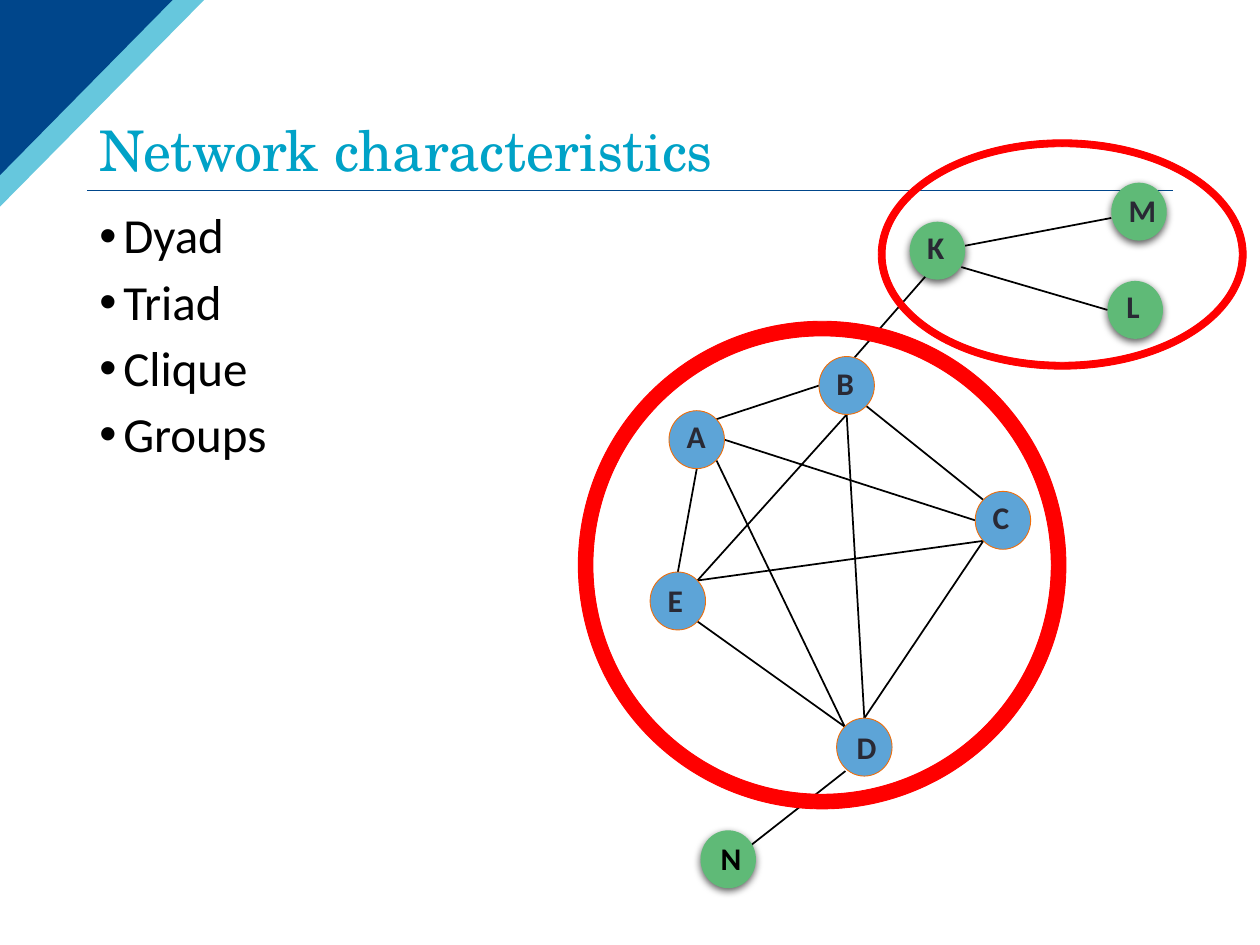
from math import cos, pi, sin

from lxml.etree import SubElement
from pptx import Presentation
from pptx.dml.color import RGBColor
from pptx.enum.shapes import MSO_CONNECTOR as Connector, MSO_SHAPE as Shape
from pptx.enum.text import MSO_ANCHOR as Anchor
from pptx.oxml import parse_xml
from pptx.oxml.ns import nsdecls, qn
from pptx.util import Inches, Pt

NAVY, CYAN, BLACK, INK = "00468B", "00A2C7", "000000", "292934"
BLUE, ORANGE, GREEN, RED = "5DA4D7", "EF6E0B", "5FBA77", "FF0000"
NODE_WIDTH, NODE_HEIGHT = 0.44, 0.46


def color(value):
    return RGBColor.from_string(value)


def site(node, index):
    """Point on a node's rim; sites run counterclockwise from the top in eighths."""
    left, top = nodes[node][:2]
    angle = index * pi / 4
    return (left + NODE_WIDTH / 2 * (1 - sin(angle)),
            top + NODE_HEIGHT / 2 * (1 - cos(angle)))


deck = Presentation()
deck.slide_width, deck.slide_height = Inches(10), Inches(7.5)
page = deck.slides.add_slide(deck.slide_layouts[6])
shapes = page.shapes

# Corner triangles
for width, height, fill, opacity in [(1.62, 1.64, CYAN, 60), (1.37, 1.39, NAVY, 100)]:
    outline = shapes.build_freeform(0, 0, scale=1.0)
    outline.add_line_segments([(Inches(width), 0), (0, Inches(height))], close=True)
    corner = outline.convert_to_shape()
    corner.shadow.inherit = False
    corner.fill.solid()
    corner.fill.fore_color.rgb = color(fill)
    corner.line.fill.background()
    if opacity < 100:
        srgb = corner._element.spPr.find(".//" + qn("a:srgbClr"))
        SubElement(srgb, qn("a:alpha"), val=str(opacity * 1000))

# Nodes: left, top, fill, letter color, letter box offset
nodes = {
    "K": (7.22, 1.76, GREEN, INK, (0.04, 0)),
    "L": (8.79, 2.23, GREEN, INK, (0.05, 0)),
    "M": (8.82, 1.45, GREEN, INK, (0.04, 0.02)),
    "N": (5.56, 6.59, GREEN, BLACK, (0.06, 0.02)),
    "A": (5.31, 3.26, BLUE, INK, (0.04, 0)),
    "B": (6.5, 2.83, BLUE, INK, (0.04, 0.01)),
    "C": (7.74, 3.9, BLUE, INK, (0.04, 0)),
    "D": (6.64, 5.7, BLUE, INK, (0.06, 0.03)),
    "E": (5.16, 4.54, BLUE, INK, (0.04, 0.02)),
}
TOP, TOP_LEFT, LEFT, BOTTOM_LEFT, BOTTOM, BOTTOM_RIGHT, RIGHT, TOP_RIGHT = range(8)
clique_links = [
    ("D", TOP, "B", BOTTOM),
    ("C", BOTTOM_LEFT, "D", TOP),
    ("A", BOTTOM, "E", TOP),
    ("A", TOP_RIGHT, "B", LEFT),
    ("E", BOTTOM_RIGHT, "D", TOP_LEFT),
    ("B", BOTTOM, "E", TOP_RIGHT),
    ("C", TOP_LEFT, "B", BOTTOM_RIGHT),
    ("E", TOP_RIGHT, "C", BOTTOM_LEFT),
    ("D", TOP_LEFT, "A", BOTTOM_RIGHT),
    ("C", LEFT, "A", RIGHT),
]
title_rule = ((0.69, 1.51), (9.31, 1.51), NAVY, 0.75)
outer_links = [
    ((6.78, 2.84), (7.41, 2.12)),
    ((6.71, 6.12), (5.92, 6.74)),
    ((7.63, 2.12), (8.79, 2.46)),
    ((7.66, 1.95), (8.82, 1.73)),
]
links = outer_links + [(site(a, i), site(b, j)) for a, i, b, j in clique_links]
for start, end, stroke, weight in [title_rule] + [(*link, BLACK, 1) for link in links]:
    line = shapes.add_connector(Connector.STRAIGHT, *map(Inches, start + end))
    line.line.color.rgb = color(stroke)
    line.line.width = Pt(weight)
    SubElement(line._element.spPr, qn("a:effectLst"))

for left, top, fill, _, _ in nodes.values():
    node = shapes.add_shape(Shape.OVAL, *map(Inches, (left, top, NODE_WIDTH, NODE_HEIGHT)))
    node.shadow.inherit = False
    node.fill.solid()
    node.fill.fore_color.rgb = color(fill)
    if fill == BLUE:
        node.line.color.rgb = color(ORANGE)
        node.line.width = Pt(0.5)
    else:
        node.line.fill.background()
        node._element.spPr.find(qn("a:effectLst")).append(parse_xml(
            f'<a:outerShdw {nsdecls("a")} blurRad="{Pt(4.5)}" dist="{Pt(1.5)}" '
            'dir="5400000" rotWithShape="0"><a:srgbClr val="000000">'
            '<a:alpha val="63000"/></a:srgbClr></a:outerShdw>'))

# Text: place, lines, font, anchor, paragraph format, bulleted
title_font = {"name": "TeX Gyre Schola", "size": Pt(32)}
body_font = {"name": "Calibri", "size": Pt(28)}
letter_font = {"name": "Calibri", "size": Pt(18), "bold": True}
texts = [
    ((0.69, 0.4, 8.62, 1.11), ["Network characteristics"], title_font, CYAN,
     Anchor.BOTTOM, {"line_spacing": 0.9}, False),
    ((0.69, 1.63, 8.62, 5.12), ["Dyad", "Triad", "Clique", "Groups"], body_font, BLACK,
     Anchor.TOP, {"line_spacing": 0.9, "space_before": Pt(7.5)}, True),
]
for letter, (left, top, _, ink, (dx, dy)) in nodes.items():
    texts.append(((left + dx, top + dy, 0.49, 0.4), [letter], letter_font, ink,
                  Anchor.TOP, {}, False))

for place, lines, font, ink, anchor, layout, bulleted in texts:
    box = shapes.add_textbox(*map(Inches, place))
    frame = box.text_frame
    frame.word_wrap = True
    frame.vertical_anchor = anchor
    for number, text in enumerate(lines):
        para = frame.add_paragraph() if number else frame.paragraphs[0]
        for name, value in layout.items():
            if number or name != "space_before":
                setattr(para, name, value)
        if bulleted:
            props = para._p.get_or_add_pPr()
            props.set("marL", str(Inches(0.19)))
            props.set("indent", str(Inches(-0.19)))
            SubElement(props, qn("a:buFont"), typeface="Arial")
            SubElement(props, qn("a:buChar"), char="•")
        span = para.add_run()
        span.text = text
        for name, value in font.items():
            setattr(span.font, name, value)
        span.font.color.rgb = color(ink)

# Rings around the clique and the group
for place in [(4.59, 2.55, 3.87, 3.87), (6.97, 1.11, 2.92, 1.82)]:
    ring = shapes.add_shape(Shape.DONUT, *map(Inches, place))
    ring.adjustments[0] = 0.03
    ring.shadow.inherit = False
    ring.fill.solid()
    ring.fill.fore_color.rgb = color(RED)
    ring.line.color.rgb = color(RED)
    ring.line.width = Pt(0.5)

deck.save("out.pptx")
